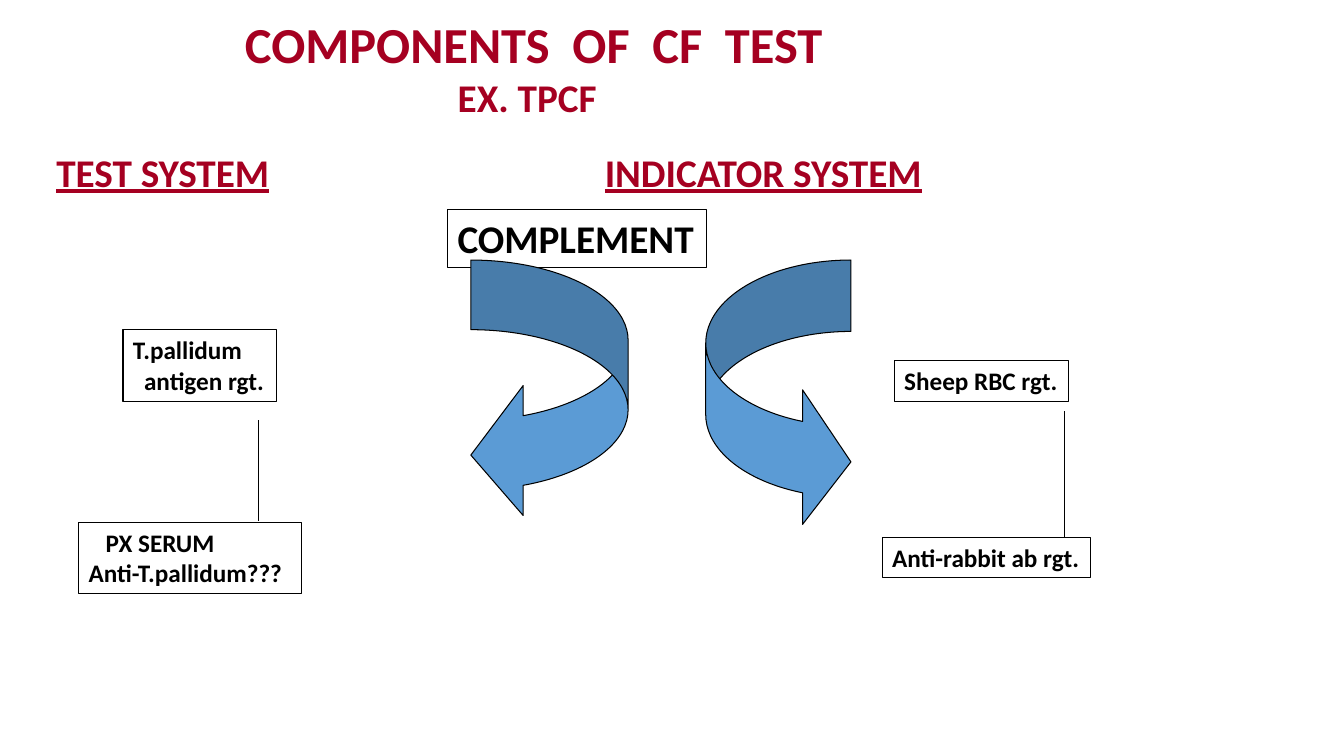
from lxml.etree import SubElement
from pptx import Presentation
from pptx.dml.color import RGBColor
from pptx.enum.shapes import MSO_CONNECTOR, MSO_SHAPE
from pptx.enum.text import MSO_ANCHOR, PP_ALIGN
from pptx.oxml.ns import qn
from pptx.util import Inches, Pt

COLORS = {k: RGBColor.from_string(v) for k, v in {
    "heading": "A50021", "ink": "000000", "arrow": "5B9BD5"}.items()}

prs = Presentation()
prs.slide_width, prs.slide_height = Inches(13.33), Inches(7.5)
s = prs.slides.add_slide(prs.slide_layouts[5])


def add_run(p, text, size, color, underline=None):
    r = p.add_run()
    r.text = text
    r.font.name, r.font.size, r.font.bold = "Calibri", Pt(size), True
    r.font.underline = underline
    r.font.color.rgb = COLORS[color]


def add_lines(tf, lines, color):
    """Write left-aligned lines, each given as (text, size, indent in inches)."""
    tf.vertical_anchor = MSO_ANCHOR.TOP
    for i, (text, size, indent) in enumerate(lines):
        p = tf.add_paragraph() if i else tf.paragraphs[0]
        p.alignment = PP_ALIGN.LEFT
        if indent:
            pPr = p._p.get_or_add_pPr()
            pPr.set("marL", str(Inches(indent)))
            pPr.set("indent", "0")
        add_run(p, text, size, color)


# Title
title = s.shapes.title
title.left, title.top = Inches(2.33), Inches(0.08)
title.width, title.height = Inches(5.99), Inches(1.18)
add_lines(title.text_frame,
          [("COMPONENTS  OF  CF  TEST", 36, 0), ("EX. TPCF", 28, 2.11)], "heading")

# Headings of the two systems, set apart by a tab stop
sp = s.shapes.add_textbox(Inches(0.46), Inches(1.42), Inches(8.88), Inches(0.57))
sp.text_frame.word_wrap = True
p = sp.text_frame.paragraphs[0]
tabs = SubElement(p._p.get_or_add_pPr(), qn("a:tabLst"))
SubElement(tabs, qn("a:tab"), pos=str(Inches(5.44)), algn="l")
for text, underline in [("TEST SYSTEM", True), ("\t", False), ("INDICATOR SYSTEM", True)]:
    add_run(p, text, 28, "heading", underline)

# Reagent boxes
boxes = [
    (1.22, 3.27, 1.52, 0.71, [("T.pallidum", 18, 0), ("antigen rgt.", 18, 0.11)]),
    (0.78, 5.18, 2.21, 0.71, [("PX SERUM", 18, 0.17), ("Anti-T.pallidum???", 18, 0)]),
    (4.44, 2.08, 2.57, 0.57, [("COMPLEMENT", 28, 0)]),
    (8.87, 3.58, 1.73, 0.4, [("Sheep RBC rgt.", 18, 0)]),
    (8.75, 5.33, 2.07, 0.4, [("Anti-rabbit ab rgt.", 18, 0)]),
]
for x, y, w, h, lines in boxes:
    sp = s.shapes.add_shape(MSO_SHAPE.RECTANGLE, Inches(x), Inches(y), Inches(w), Inches(h))
    sp.shadow.inherit = False
    sp.fill.background()
    sp.line.color.rgb, sp.line.width = COLORS["ink"], Pt(0.75)
    sp.text_frame.word_wrap = False
    add_lines(sp.text_frame, lines, "ink")

# Lines joining the reagents of each system
for x, top, bottom in [(2.56, 4.17, 5.17), (10.56, 4.08, 5.33)]:
    line = s.shapes.add_connector(
        MSO_CONNECTOR.STRAIGHT, Inches(x), Inches(top), Inches(x), Inches(bottom))
    line.line.color.rgb, line.line.width = COLORS["ink"], Pt(0.75)
    SubElement(line._element.spPr, qn("a:effectLst"))

# Curved arrows from the complement to both systems
arrows = [
    (MSO_SHAPE.CURVED_LEFT_ARROW, 4.67, 1.56, 2.58, (0.443, 0.886, 0.333)),
    (MSO_SHAPE.CURVED_RIGHT_ARROW, 7, 1.44, 2.67, (0.492, 0.985, 0.333)),
]
for kind, x, w, h, adjustments in arrows:
    sp = s.shapes.add_shape(kind, Inches(x), Inches(2.58), Inches(w), Inches(h))
    sp.shadow.inherit = False
    sp.fill.solid()
    sp.fill.fore_color.rgb = COLORS["arrow"]
    sp.line.color.rgb, sp.line.width = COLORS["ink"], Pt(0.75)
    for i, value in enumerate(adjustments):
        sp.adjustments[i] = value

prs.save("out.pptx")
